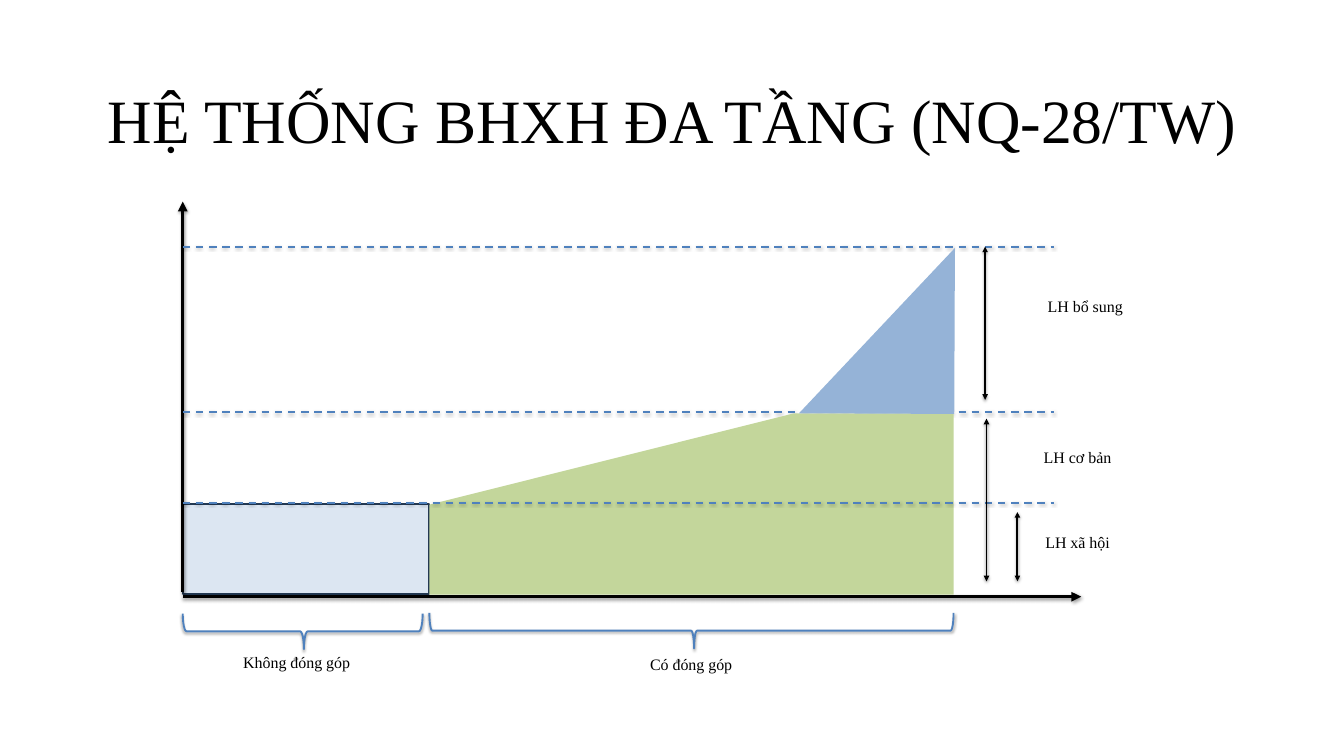
from dataclasses import dataclass

from lxml.etree import SubElement
from pptx import Presentation
from pptx.dml.color import RGBColor
from pptx.enum.dml import MSO_LINE
from pptx.enum.shapes import MSO_CONNECTOR, MSO_SHAPE
from pptx.enum.text import MSO_ANCHOR, MSO_AUTO_SIZE, PP_ALIGN
from pptx.oxml.ns import qn
from pptx.util import Inches, Pt


@dataclass(frozen=True)
class Theme:
    font: str = "Times New Roman"
    title_size: float = 66
    label_size: float = 17.1
    axis_width: float = 3.5
    line_width: float = 2
    ink: str = "000000"
    guide: str = "4F81BD"
    social: str = "DCE6F2"
    social_edge: str = "233953"
    basic: str = "C3D69B"
    extra: str = "95B3D7"


@dataclass(frozen=True)
class Box:
    left: float
    top: float
    width: float
    height: float

    def x(self, offset):
        return Inches(self.left + offset)

    def y(self, offset):
        return Inches(self.top + offset)


THEME = Theme()
PLOT = Box(2.72, 3.67, 12.96, 5.21)

# Offsets from the left and top of the plot
MIDDLE_LEVEL, BASE_LEVEL = 2.46, 3.81
CONTRIBUTION_START, KNEE, CONTRIBUTION_END = 3.67, 9.1, 11.47


def style_text(shape, text, size, **paragraph_format):
    frame = shape.text_frame
    frame.word_wrap = True
    frame.text = text
    paragraph = frame.paragraphs[0]
    for name, value in {"alignment": PP_ALIGN.CENTER, **paragraph_format}.items():
        setattr(paragraph, name, value)
    font_format = {"name": THEME.font, "size": Pt(size)}
    font = paragraph.runs[0].font
    for name, value in font_format.items():
        setattr(font, name, value)
    font.color.rgb = RGBColor.from_string(THEME.ink)
    return frame


def style_line(shape, color, width):
    shape.line.color.rgb = RGBColor.from_string(color)
    shape.line.width = Pt(width)


def add_soft_shadow(shape):
    properties = shape._element.spPr
    effects = properties.find(qn("a:effectLst"))
    if effects is None:
        effects = SubElement(properties, qn("a:effectLst"))
    shadow = SubElement(effects, qn("a:outerShdw"), blurRad=str(Pt(3.1)),
                        dist=str(Pt(1.6)), dir="5400000", rotWithShape="0")
    color = SubElement(shadow, qn("a:srgbClr"), val=THEME.ink)
    SubElement(color, qn("a:alpha"), val="38000")


def add_line(shapes, start, end, color, width, dash=None, arrows=()):
    line = shapes.add_connector(MSO_CONNECTOR.STRAIGHT, *start, *end)
    style_line(line, color, width)
    if dash:
        line.line.dash_style = dash
    for arrow in arrows:
        SubElement(line.line._get_or_add_ln(), qn(f"a:{arrow}"), type="triangle")
    add_soft_shadow(line)


def add_label(shapes, text, left, top, width, height=0.45):
    label = shapes.add_textbox(left, top, Inches(width), Inches(height))
    frame = style_text(label, text, THEME.label_size, space_after=Pt(7.3))
    frame.auto_size = MSO_AUTO_SIZE.SHAPE_TO_FIT_TEXT


def add_area(shapes, box, points, color):
    corners = [(box.x(x), box.y(y)) for x, y in points]
    builder = shapes.build_freeform(*corners[0])
    builder.add_line_segments(corners[1:], close=True)
    area = builder.convert_to_shape()
    area.shadow.inherit = False
    area.fill.solid()
    area.fill.fore_color.rgb = RGBColor.from_string(color)
    area.line.fill.background()


def add_title(slide, box):
    title = slide.shapes.title
    frame = style_text(title, "HỆ THỐNG BHXH ĐA TẦNG (NQ-28/TW)",
                       THEME.title_size, line_spacing=0.9)
    frame.auto_size = MSO_AUTO_SIZE.NONE
    frame.vertical_anchor = MSO_ANCHOR.MIDDLE
    for name in ("left", "top", "width", "height"):
        setattr(title, name, Inches(getattr(box, name)))


def add_social_tier(shapes, box):
    tier = shapes.add_shape(MSO_SHAPE.RECTANGLE, box.x(0), box.y(3.83),
                            Inches(CONTRIBUTION_START), Inches(1.34))
    tier.shadow.inherit = False
    tier.fill.solid()
    tier.fill.fore_color.rgb = RGBColor.from_string(THEME.social)
    style_line(tier, THEME.social_edge, THEME.line_width)


def add_axes(shapes, box):
    for start, end in (((0, box.height), (13.37, box.height)),
                       ((0, 5.14), (0, -0.67))):
        add_line(shapes, (box.x(start[0]), box.y(start[1])),
                 (box.x(end[0]), box.y(end[1])),
                 THEME.ink, THEME.axis_width, arrows=["tailEnd"])


def add_levels(shapes, box, levels):
    for level in levels:
        add_line(shapes, (box.x(0), box.y(level)), (box.x(box.width), box.y(level)),
                 THEME.guide, THEME.line_width, dash=MSO_LINE.DASH)


def add_contributory_tiers(shapes, box):
    bottom, middle = 5.18, MIDDLE_LEVEL + 0.02
    add_area(shapes, box, [(CONTRIBUTION_START, bottom),
                           (CONTRIBUTION_START, BASE_LEVEL + 0.03),
                           (KNEE, middle), (CONTRIBUTION_END, middle),
                           (CONTRIBUTION_END, bottom)], THEME.basic)
    add_area(shapes, box, [(KNEE + 0.07, middle), (CONTRIBUTION_END + 0.02, 0.02),
                           (CONTRIBUTION_END + 0.01, middle + 0.01)], THEME.extra)


def add_tier_spans(shapes, box):
    for x, top, bottom in ((11.94, 0, 2.28), (11.96, 2.56, 4.98), (12.42, 3.95, 4.98)):
        add_line(shapes, (box.x(x), box.y(top)), (box.x(x), box.y(bottom)),
                 THEME.ink, THEME.line_width, arrows=["headEnd", "tailEnd"])
    for text, x, y, width, height in (("LH bổ sung", 12.3, 0.7, 2.26, 0.45),
                                      ("LH cơ bản", 12.19, 2.94, 2.25, 0.45),
                                      ("LH xã hội", 12.19, 4.21, 2.25, 1.03)):
        add_label(shapes, text, box.x(x), box.y(y), width, height)


def add_contribution_groups(shapes, box):
    """Braces under the horizontal axis, each with its label."""
    depth = 0.53
    for text, start, length, top, bend, label_x, label_y in (
            ("Không đóng góp", 0, 3.57, 5.46, 0.106, 0.33, 5.99),
            ("Có đóng góp", CONTRIBUTION_START, 7.8, 5.45, 0.083, 6.2, 6.02)):
        brace = shapes.add_shape(
            MSO_SHAPE.LEFT_BRACE, box.x(start + (length - depth) / 2),
            box.y(top - (length - depth) / 2), Inches(depth), Inches(length))
        brace.rotation = 270
        brace.adjustments[0], brace.adjustments[1] = bend, 0.505
        brace.fill.background()
        style_line(brace, THEME.guide, THEME.line_width)
        brace.shadow.inherit = False
        add_soft_shadow(brace)
        add_label(shapes, text, box.x(label_x), box.y(label_y), 2.73)


def main():
    presentation = Presentation()
    presentation.slide_width, presentation.slide_height = Inches(20), Inches(11.25)
    slide = presentation.slides.add_slide(presentation.slide_layouts[5])
    add_title(slide, Box(1.38, 0.91, 17.25, 1.86))
    shapes = slide.shapes.add_group_shape().shapes
    add_social_tier(shapes, PLOT)
    add_axes(shapes, PLOT)
    add_levels(shapes, PLOT, [MIDDLE_LEVEL, 0])
    add_contributory_tiers(shapes, PLOT)
    add_levels(shapes, PLOT, [BASE_LEVEL])
    add_tier_spans(shapes, PLOT)
    add_contribution_groups(shapes, PLOT)
    presentation.save("out.pptx")


if __name__ == "__main__":
    main()
